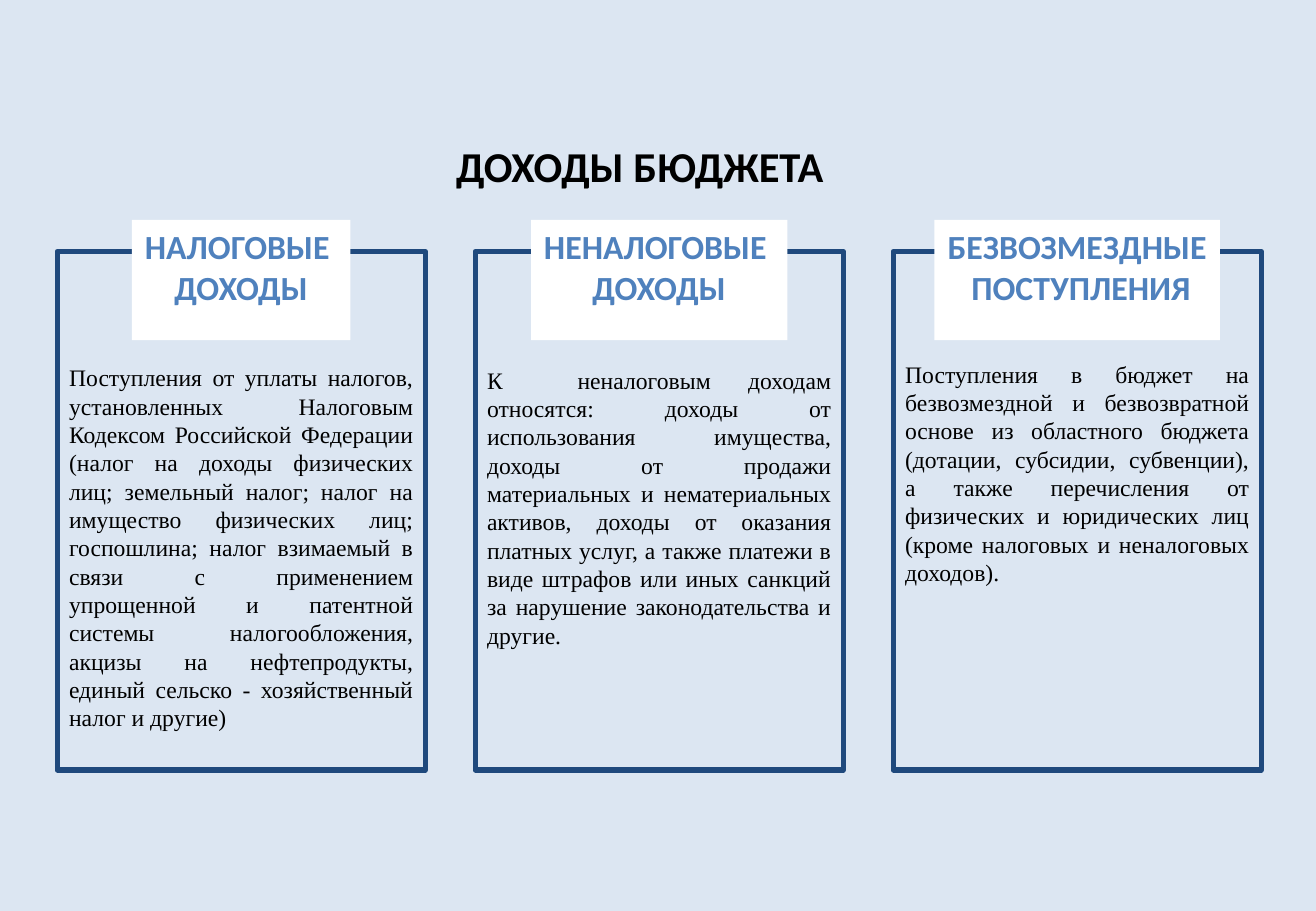
import pptx
import pptx.dml.color
import pptx.enum.shapes
import pptx.enum.text
import pptx.util

ALIGN = pptx.enum.text.PP_ALIGN
ANCHOR = pptx.enum.text.MSO_ANCHOR


def colour(code):
    return pptx.dml.color.RGBColor.from_string(code)


class IncomeSlide:
    # Style and column grid, in inches
    WIDTH, HEIGHT = 10.83, 7.5
    LEFT, COLUMN, GAP = 0.47, 3.03, 0.41
    FRAME_TOP, FRAME_HEIGHT = 2.07, 4.27
    LABEL_TOP, LABEL_HEIGHT = 1.81, 0.99
    PAPER, NAVY, BLUE, WHITE, BLACK = "DCE6F2", "1F497D", "4F81BD", "FFFFFF", "000000"
    HEADING_FONT, BODY_FONT = "Calibri", "Times New Roman"

    def __init__(self, deck):
        deck.slide_width = pptx.util.Inches(self.WIDTH)
        deck.slide_height = pptx.util.Inches(self.HEIGHT)
        self.page = deck.slides.add_slide(deck.slide_layouts[5])
        self.page.background.fill.solid()
        self.page.background.fill.fore_color.rgb = colour(self.PAPER)

    def column_left(self, column):
        return self.LEFT + column * (self.COLUMN + self.GAP)

    def set_text(self, shape, text, font, size, code, align,
                 anchor=ANCHOR.TOP, bold=False, wrap=True):
        frame = shape.text_frame
        frame.text = text
        frame.word_wrap = wrap
        frame.auto_size = pptx.enum.text.MSO_AUTO_SIZE.NONE
        frame.vertical_anchor = anchor
        for para in frame.paragraphs:
            para.alignment = align
            for span in para.runs:
                span.font.name = font
                span.font.size = pptx.util.Pt(size)
                span.font.bold = bold
                span.font.color.rgb = colour(code)

    def rectangle(self, left, top, width, height):
        box = self.page.shapes.add_shape(
            pptx.enum.shapes.MSO_SHAPE.RECTANGLE,
            *map(pptx.util.Inches, (left, top, width, height)))
        box.shadow.inherit = False
        return box

    def title(self, text):
        title = self.page.shapes.title
        title.left, title.top, title.width, title.height = map(
            pptx.util.Inches, (0.44, 0.98, 9.65, 0.76))
        self.set_text(title, text, self.HEADING_FONT, 25.2, self.BLACK,
                      ALIGN.CENTER, ANCHOR.MIDDLE, bold=True)

    def frame(self, column):
        box = self.rectangle(self.column_left(column), self.FRAME_TOP,
                             self.COLUMN, self.FRAME_HEIGHT)
        box.fill.background()
        box.line.color.rgb = colour(self.NAVY)
        box.line.width = pptx.util.Pt(3)

    def label(self, column, width, text):
        left = self.column_left(column) + (self.COLUMN - width) / 2
        box = self.rectangle(left, self.LABEL_TOP, width, self.LABEL_HEIGHT)
        box.fill.solid()
        box.fill.fore_color.rgb = colour(self.WHITE)
        box.line.fill.background()
        self.set_text(box, text, self.HEADING_FONT, 20, self.BLUE,
                      ALIGN.CENTER, bold=True, wrap=False)

    def body(self, column, top, height, text):
        box = self.page.shapes.add_textbox(*map(
            pptx.util.Inches, (self.column_left(column), top, self.COLUMN, height)))
        self.set_text(box, text, self.BODY_FONT, 14, self.BLACK, ALIGN.JUSTIFY)


# Label width, label, body top, body height, body text
INCOME_KINDS = [
    (1.8, "НАЛОГОВЫЕ \nДОХОДЫ", 2.94, 4.04,
     "Поступления от уплаты налогов, установленных Налоговым Кодексом Российской "
     "Федерации (налог на доходы физических лиц; земельный налог; налог на имущество "
     "физических лиц; госпошлина; налог взимаемый в связи с применением упрощенной и "
     "патентной системы налогообложения, акцизы на нефтепродукты, единый сельско - "
     "хозяйственный налог и другие)"),
    (2.11, "НЕНАЛОГОВЫЕ \nДОХОДЫ", 2.96, 3.14,
     "К  неналоговым доходам относятся: доходы от использования имущества, доходы от "
     "продажи материальных и нематериальных активов, доходы от оказания платных услуг, "
     "а также платежи в виде штрафов или иных санкций за нарушение законодательства и "
     "другие."),
    (2.35, "БЕЗВОЗМЕЗДНЫЕ\n ПОСТУПЛЕНИЯ", 2.91, 2.54,
     "Поступления в бюджет на безвозмездной и безвозвратной основе из областного бюджета "
     "(дотации, субсидии, субвенции), а также перечисления от физических и юридических лиц "
     "(кроме налоговых и неналоговых доходов)."),
]


def main():
    deck = pptx.Presentation()
    slide = IncomeSlide(deck)
    slide.title("ДОХОДЫ БЮДЖЕТА")

    # One framed column per kind of income
    for column, (label_width, label, top, height, text) in enumerate(INCOME_KINDS):
        slide.frame(column)
        slide.label(column, label_width, label)
        slide.body(column, top, height, text)

    deck.save("out.pptx")


if __name__ == "__main__":
    main()
